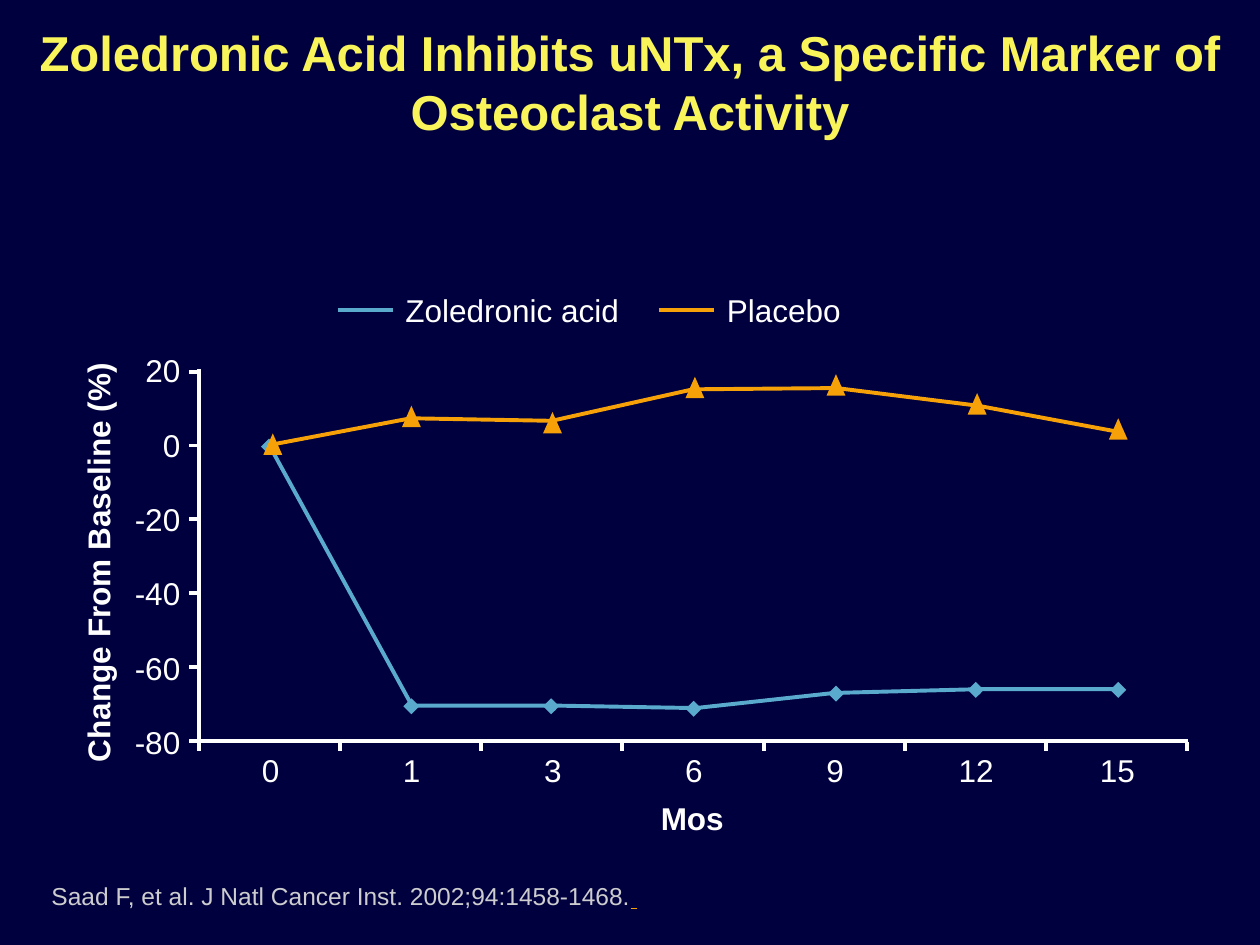
from lxml import etree
from pptx import Presentation
from pptx.dml.color import RGBColor
from pptx.enum.shapes import MSO_CONNECTOR, MSO_SHAPE
from pptx.enum.text import MSO_ANCHOR, MSO_AUTO_SIZE, PP_ALIGN
from pptx.oxml.ns import qn
from pptx.util import Inches, Pt

STRAIGHT = MSO_CONNECTOR.STRAIGHT
RECT, TRIANGLE = MSO_SHAPE.RECTANGLE, MSO_SHAPE.ISOSCELES_TRIANGLE
LEFT, CENTER, RIGHT = PP_ALIGN.LEFT, PP_ALIGN.CENTER, PP_ALIGN.RIGHT
TOP, MIDDLE, BOTTOM = MSO_ANCHOR.TOP, MSO_ANCHOR.MIDDLE, MSO_ANCHOR.BOTTOM
NO_FIT, GROW = MSO_AUTO_SIZE.NONE, MSO_AUTO_SIZE.SHAPE_TO_FIT_TEXT

COLORS = {"back": "00003E", "title": "F8F45A", "text": "FFFFFF",
          "drug": "5AAACE", "placebo": "F6A108", "note": "CDCDCF"}
MONTHS = ["0", "1", "3", "6", "9", "12", "15"]
LEVELS = ["20", "0", "-20", "-40", "-60", "-80"]
WIDTHS = {1: 0.34, 2: 0.48, 3: 0.57}    # label width by number of signs
X0, Y0, Y1 = 1.58, 2.95, 5.88           # axis, top level, foot
STEP, RISE = 1.12, (Y1 - Y0) / 5

# Points of each curve and top left corners of its markers
DRUG = [(2.13, 3.52), (3.27, 5.6), (4.39, 5.6), (5.52, 5.62),
        (6.62, 5.5), (7.77, 5.47), (8.87, 5.47)]
DIAMONDS = [(2.09, 3.5), (3.22, 5.56), (4.33, 5.56), (5.46, 5.58),
            (6.59, 5.46), (7.7, 5.43), (8.83, 5.43)]
PLACEBO = [(2.15, 3.53), (3.26, 3.32), (4.38, 3.34), (5.5, 3.09),
           (6.64, 3.08), (7.76, 3.22), (8.89, 3.43)]
TRIANGLES = [(2.09, 3.44), (3.19, 3.22), (4.31, 3.27), (5.44, 2.99),
             (6.56, 2.97), (7.68, 3.12), (8.8, 3.32)]


def rgb(name):
    return RGBColor.from_string(COLORS[name])


class Deck:
    font = "Arial"
    width = Pt(2.25)

    def __init__(self):
        self.prs = Presentation()
        self.prs.slide_width, self.prs.slide_height = Inches(10), Inches(7.5)
        self.slide = self.prs.slides.add_slide(self.prs.slide_layouts[5])
        self.shapes = self.slide.shapes
        self.paint(self.slide.background.fill, "back")

    def paint(self, fill, color):
        fill.solid()
        fill.fore_color.rgb = rgb(color)

    def style(self, font, size, color, bold=False):
        font.name, font.size, font.bold = self.font, Pt(size), bold
        font.color.rgb = rgb(color)

    def stroke(self, line, color):
        line.color.rgb, line.width = rgb(color), self.width

    def title(self, text, box):
        shape = self.shapes.title
        shape.left, shape.top, shape.width, shape.height = map(Inches, box)
        self.paint(shape.fill, "back")
        frame = shape.text_frame
        frame.text = text
        frame.auto_size, frame.vertical_anchor = NO_FIT, MIDDLE
        para = frame.paragraphs[0]
        para.alignment = CENTER
        self.style(para.runs[0].font, 28, "title", True)

    def text(self, text, box, size=18, color="text", bold=False, align=LEFT,
             anchor=TOP, turn=0, wrap=True, fit=GROW):
        shape = self.shapes.add_textbox(*map(Inches, box))
        shape.rotation = turn
        frame = shape.text_frame
        frame.word_wrap, frame.vertical_anchor = wrap, anchor
        frame.auto_size = fit
        frame.text = text
        para = frame.paragraphs[0]
        para.alignment = align
        self.style(para.runs[0].font, size, color, bold)
        return para

    def name(self, text, box, turn=0):
        self.text(text, box, bold=True, align=CENTER, anchor=BOTTOM,
                  turn=turn, fit=NO_FIT)

    def line(self, start, end, color="text"):
        points = map(Inches, (*start, *end))
        link = self.shapes.add_connector(STRAIGHT, *points)
        self.stroke(link.line, color)
        etree.SubElement(link._element.spPr, qn("a:effectLst"))

    def curve(self, points, color):
        first, *rest = [(Inches(x), Inches(y)) for x, y in points]
        pen = self.shapes.build_freeform(*first)
        pen.add_line_segments(rest, close=False)
        shape = pen.convert_to_shape()
        shape.shadow.inherit = False
        shape.fill.background()
        self.stroke(shape.line, color)

    def marks(self, kind, spots, size, color, turn=0):
        for spot in spots:
            shape = self.shapes.add_shape(kind, *map(Inches, (*spot, *size)))
            shape.rotation = turn
            shape.shadow.inherit = False
            self.paint(shape.fill, color)
            shape.line.fill.background()


def main():
    deck = Deck()
    deck.title("Zoledronic Acid Inhibits uNTx, a Specific Marker of "
               "Osteoclast Activity", (0, 0.04, 10, 1.21))

    # Axes and their names
    deck.name("Mos", (1.51, 6.26, 7.97, 0.43))
    deck.name("Change From Baseline (%)", (-0.94, 4.25, 3.4, 0.43), 270)
    deck.line((1.56, Y1), (9.43, Y1))
    deck.line((X0, 2.93), (X0, 5.91))

    # Month ticks stand between the month labels
    for i in range(len(MONTHS) + 1):
        x = X0 + i * STEP
        deck.line((x, 5.89), (x, 5.96))
    for i, month in enumerate(MONTHS):
        wide = WIDTHS[len(month)]
        mid = 2.15 + i * STEP
        deck.text(month, (mid - wide / 2, 5.91, wide, 0.4), wrap=False)

    # Level ticks and labels
    for i, level in enumerate(LEVELS):
        y = Y0 + i * RISE
        wide = WIDTHS[len(level)]
        deck.line((1.57, y), (1.5, y))
        deck.text(level, (1.53 - wide, 2.74 + i * 0.59, wide, 0.4),
                  align=RIGHT, wrap=False)

    # Curves with markers
    deck.curve(DRUG, "drug")
    deck.marks(RECT, DIAMONDS, (0.09, 0.09), "drug", 315)
    deck.curve(PLACEBO, "placebo")
    deck.marks(TRIANGLE, TRIANGLES, (0.15, 0.17), "placebo")

    # Legend
    for name, color, left, wide in (("Zoledronic acid", "drug", 2.68, 1.96),
                                    ("Placebo", "placebo", 5.23, 1.6)):
        deck.text(name, (left + 0.44, 2.26, wide, 0.4))
        deck.line((left, 2.46), (left + 0.44, 2.46), color)

    # Source note with its underlined end
    note = deck.text("Saad F, et al. J Natl Cancer Inst. 2002;94:1458-1468.",
                     (0.31, 6.94, 5.92, 0.34), 14, "note", anchor=MIDDLE)
    end = note.add_run()
    end.text = " "
    deck.style(end.font, 14, "placebo")
    end.font.underline = True

    deck.prs.save("out.pptx")


if __name__ == "__main__":
    main()
